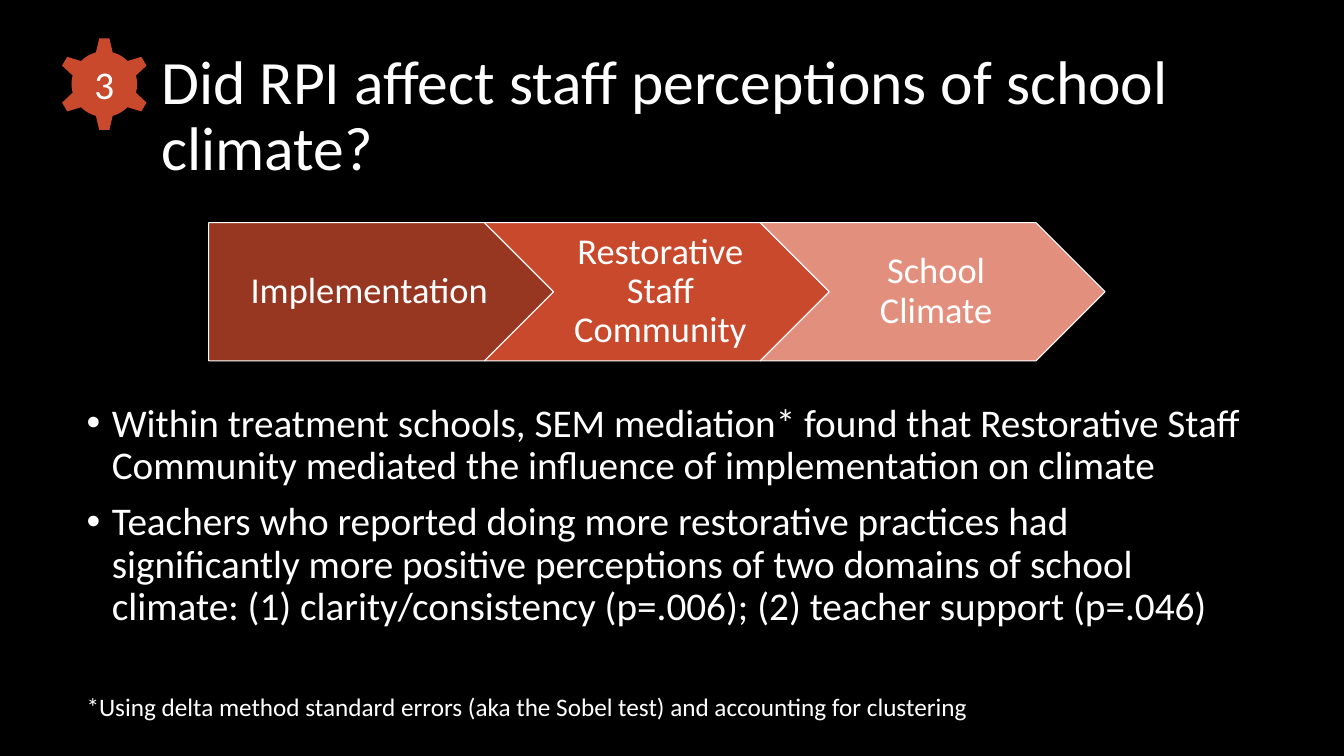
from dataclasses import dataclass
from pptx import Presentation
from pptx.dml.color import RGBColor
from pptx.enum.shapes import MSO_SHAPE
from pptx.enum.text import MSO_ANCHOR, MSO_AUTO_SIZE, PP_ALIGN
from pptx.shapes.autoshape import Shape
from pptx.slide import Slide
from pptx.text.text import TextFrame
from pptx.util import Inches, Pt

COLORS = {
    "background": "000000",
    "text": "FFFFFF",
    "dark": "973721",
    "accent": "C9492C",
    "light": "E28F7D",
}
FONT = "Calibri"
GRID_UNIT = Inches(1) / 12


@dataclass(frozen=True)
class Area:
    column: float
    row: float
    columns: float
    rows: float

    def lengths(self) -> list[int]:
        return [round(cells * GRID_UNIT)
                for cells in (self.column, self.row, self.columns, self.rows)]


@dataclass(frozen=True)
class Stage:
    label: str
    outline: MSO_SHAPE
    color: str
    left_inset: float


TITLE_AREA = Area(18, 4.68, 141.12, 18.6)
BODY_AREA = Area(9.12, 47.4, 141.72, 36.72)
FOOTNOTE_AREA = Area(9.12, 81.72, 132.96, 4.8)
GEAR_AREA = Area(6.84, 4.44, 11.16, 11.16)
FIRST_STAGE_AREA = Area(24.84, 26.52, 41.04, 16.44)
STAGE_STEP = 32.82

STAGES = [
    Stage("Implementation", MSO_SHAPE.PENTAGON, "dark", 0.15),
    Stage("Restorative Staff Community", MSO_SHAPE.CHEVRON, "accent", 0.11),
    Stage("School Climate", MSO_SHAPE.CHEVRON, "light", 0.11),
]
FINDINGS = [
    "Within treatment schools, SEM mediation* found that Restorative Staff "
    "Community mediated the influence of implementation on climate",
    "Teachers who reported doing more restorative practices had significantly "
    "more positive perceptions of two domains of school climate: "
    "(1) clarity/consistency (p=.006); (2) teacher support (p=.046)",
]


def rgb(name: str) -> RGBColor:
    return RGBColor.from_string(COLORS[name])


def place(box: Shape, area: Area) -> None:
    box.left, box.top, box.width, box.height = area.lengths()


def write(frame: TextFrame, text: str, size: float, align: PP_ALIGN = PP_ALIGN.LEFT,
          line_spacing: float = 0.9) -> None:
    frame.word_wrap = True
    frame.auto_size = MSO_AUTO_SIZE.NONE
    frame.text = text
    for para in frame.paragraphs:
        para.alignment = align
        para.line_spacing = line_spacing
        para.space_before = Pt(0)
        for span in para.runs:
            span.font.name = FONT
            span.font.size = Pt(size)
            span.font.color.rgb = rgb("text")


def add_filled_shape(page: Slide, outline: MSO_SHAPE, area: Area, color: str) -> Shape:
    box = page.shapes.add_shape(outline, *area.lengths())
    box.shadow.inherit = False
    box.fill.solid()
    box.fill.fore_color.rgb = rgb(color)
    box.line.fill.background()
    box.text_frame.vertical_anchor = MSO_ANCHOR.MIDDLE
    return box


def add_findings(page: Slide) -> None:
    body = page.placeholders[1]
    place(body, BODY_AREA)
    write(body.text_frame, "\n".join(FINDINGS), 28)
    for number, para in enumerate(body.text_frame.paragraphs):
        properties = para._p.get_or_add_pPr()
        properties.set("marL", str(Inches(0.25)))
        properties.set("indent", str(-Inches(0.25)))
        para.space_before = Pt(10 if number else 0)


def add_stages(page: Slide) -> None:
    first = FIRST_STAGE_AREA
    for number, stage in enumerate(STAGES):
        area = Area(first.column + number * STAGE_STEP, first.row,
                    first.columns, first.rows)
        box = add_filled_shape(page, stage.outline, area, stage.color)
        box.line.color.rgb = rgb("text")
        box.line.width = Pt(0.75)
        frame = box.text_frame
        frame.margin_left = Inches(stage.left_inset)
        frame.margin_right = Inches(0.04)
        frame.margin_top = frame.margin_bottom = Inches(0.08)
        write(frame, stage.label, 26, PP_ALIGN.CENTER)


def main() -> None:
    deck = Presentation()
    deck.slide_width, deck.slide_height = Inches(13.33), Inches(7.5)
    page = deck.slides.add_slide(deck.slide_layouts[1])
    page.background.fill.solid()
    page.background.fill.fore_color.rgb = rgb("background")

    add_findings(page)
    add_stages(page)

    footnote = page.shapes.add_textbox(*FOOTNOTE_AREA.lengths())
    write(footnote.text_frame, "*Using delta method standard errors (aka the Sobel test) "
          "and accounting for clustering", 18, line_spacing=1)

    title = page.shapes.title
    place(title, TITLE_AREA)
    write(title.text_frame, "Did RPI affect staff perceptions of school climate?", 44)
    title.text_frame.vertical_anchor = MSO_ANCHOR.MIDDLE

    gear = add_filled_shape(page, MSO_SHAPE.GEAR_6, GEAR_AREA, "accent")
    write(gear.text_frame, "3", 28, PP_ALIGN.CENTER, line_spacing=1)

    deck.save("out.pptx")


if __name__ == "__main__":
    main()
